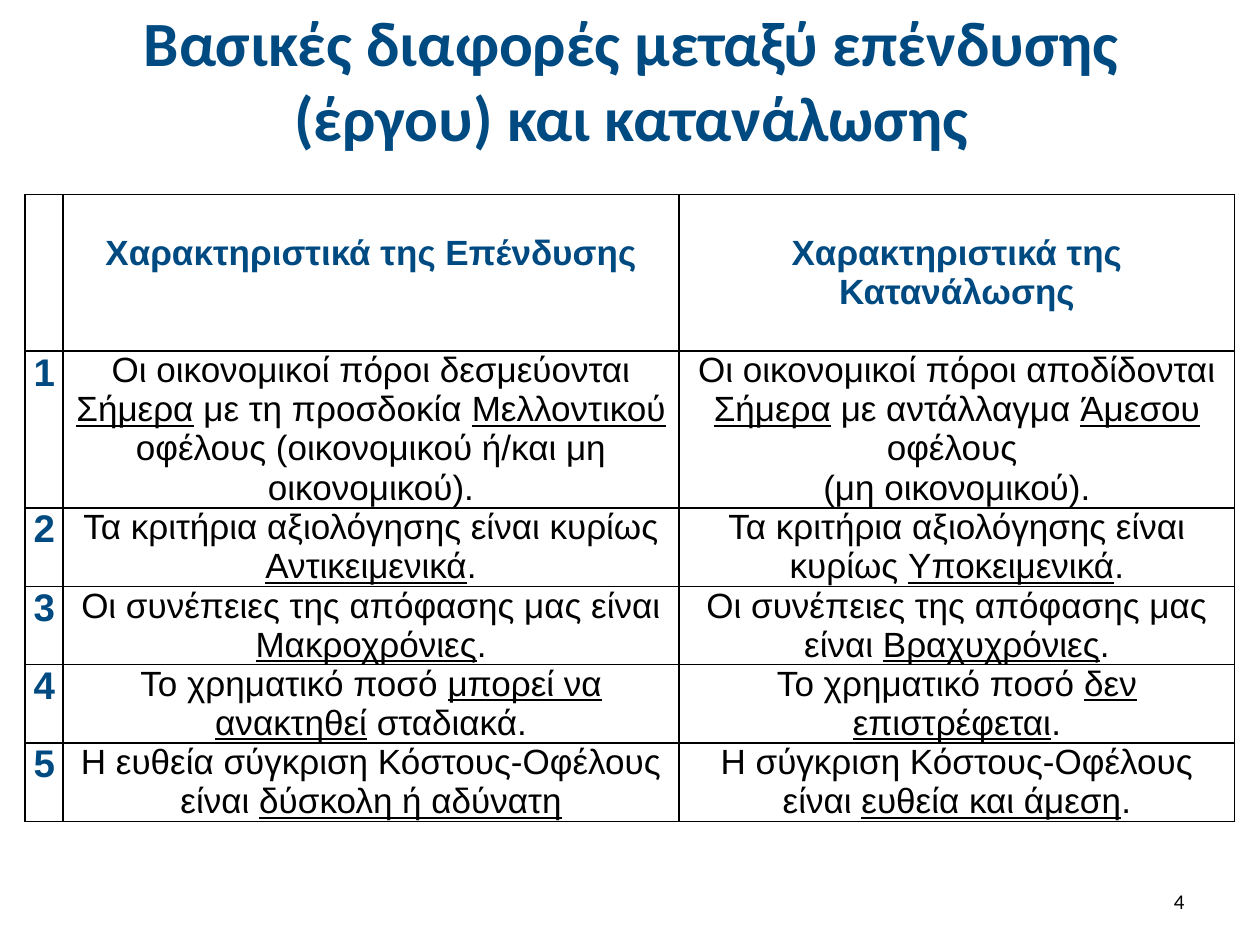
"""Build a slide comparing the features of investment and consumption."""
from dataclasses import dataclass

from lxml import etree
from pptx import Presentation
from pptx.dml.color import RGBColor
from pptx.enum.text import MSO_ANCHOR, MSO_AUTO_SIZE, PP_ALIGN
from pptx.oxml.ns import qn
from pptx.util import Cm, Pt

BLUE = RGBColor(0x00, 0x4A, 0x82)
BLACK = RGBColor(0x00, 0x00, 0x00)
CENTER, RIGHT = PP_ALIGN.CENTER, PP_ALIGN.RIGHT
MIDDLE, NO_FIT = MSO_ANCHOR.MIDDLE, MSO_AUTO_SIZE.NONE
COL_WIDTHS = (0.77, 12.42, 11.2)
LINE_HEIGHT = 0.79


@dataclass
class Difference:
    investment: str
    consumption: str
    lines: int = 2


HEADER = Difference("Χαρακτηριστικά της Επένδυσης", "Χαρακτηριστικά της Κατανάλωσης", 4)
DIFFERENCES = [
    Difference(
        "Οι οικονομικοί πόροι δεσμεύονται _Σήμερα_ με τη προσδοκία _Μελλοντικού_"
        " οφέλους (οικονομικού ή/και μη οικονομικού).",
        "Οι οικονομικοί πόροι αποδίδονται _Σήμερα_ με αντάλλαγμα _Άμεσου_"
        " οφέλους \n(μη οικονομικού).",
        4,
    ),
    Difference(
        "Τα κριτήρια αξιολόγησης είναι κυρίως _Αντικειμενικά_.",
        "Τα κριτήρια αξιολόγησης είναι κυρίως _Υποκειμενικά_.",
    ),
    Difference(
        "Οι συνέπειες της απόφασης μας είναι _Μακροχρόνιες_.",
        "Οι συνέπειες της απόφασης μας είναι _Βραχυχρόνιες_.",
    ),
    Difference(
        "Το χρηματικό ποσό _μπορεί να ανακτηθεί_ σταδιακά.",
        "Το χρηματικό ποσό _δεν επιστρέφεται_.",
    ),
    Difference(
        "Η ευθεία σύγκριση Κόστους-Οφέλους είναι _δύσκολη ή αδύνατη_",
        "Η σύγκριση Κόστους-Οφέλους είναι _ευθεία και άμεση_.",
    ),
]


def write(tf, text: str, size=20, font="Arial", color=BLACK, bold=False, align=CENTER) -> None:
    """Write text into a frame, underlining the parts between underscores."""
    p = tf.paragraphs[0]
    p.alignment = align
    for n, line in enumerate(text.split("\n")):
        if n:
            p.add_line_break()
        for i, part in enumerate(line.split("_")):
            if not part:
                continue
            r = p.add_run()
            r.text = part
            r.font.size = Pt(size)
            r.font.name = font
            r.font.bold = bold
            r.font.underline = i % 2 == 1
            r.font.color.rgb = color


def format_cell(cell, padding: float = 0) -> None:
    """Clear the fill, set the margins and draw the four borders."""
    cell.fill.background()
    cell.margin_left = cell.margin_right = Cm(0.18)
    cell.margin_top = cell.margin_bottom = Cm(padding)
    tc_pr = cell._tc.get_or_add_tcPr()
    for i, side in enumerate(("a:lnL", "a:lnR", "a:lnT", "a:lnB")):
        ln = etree.Element(qn(side), w=str(Pt(1)))
        fill = etree.SubElement(ln, qn("a:solidFill"))
        etree.SubElement(fill, qn("a:srgbClr"), val=str(BLACK))
        tc_pr.insert(i, ln)


def add_differences(slide) -> None:
    """Add the comparison table with its header and numbered rows."""
    rows = [HEADER, *DIFFERENCES]
    height = sum(row.lines for row in rows) * LINE_HEIGHT
    table = slide.shapes.add_table(
        len(rows), len(COL_WIDTHS), Cm(0.5), Cm(3.92), Cm(sum(COL_WIDTHS)), Cm(height)
    ).table
    table.first_row = table.horz_banding = False
    for col, width in zip(table.columns, COL_WIDTHS):
        col.width = Cm(width)
    for n, row in enumerate(rows):
        table.rows[n].height = Cm(row.lines * LINE_HEIGHT)
        head = n == 0
        cells = [table.cell(n, c) for c in range(len(COL_WIDTHS))]
        for cell in cells:
            format_cell(cell, LINE_HEIGHT if head else 0)
        if not head:
            write(cells[0].text_frame, str(n), size=22, color=BLUE, bold=True)
        for cell, text in zip(cells[1:], (row.investment, row.consumption)):
            write(cell.text_frame, text, color=BLUE if head else BLACK, bold=head)


def main() -> None:
    """Build and save the slide."""
    prs = Presentation()
    prs.slide_width, prs.slide_height = Cm(25.4), Cm(19.05)
    slide = prs.slides.add_slide(prs.slide_layouts[5])

    title = slide.shapes.title
    title.left, title.top, title.width, title.height = Cm(1.3), Cm(0.33), Cm(22.86), Cm(2.51)
    title.text_frame.auto_size = NO_FIT
    title.text_frame.vertical_anchor = MIDDLE
    write(title.text_frame, "Βασικές διαφορές μεταξύ επένδυσης (έργου) και κατανάλωσης",
          size=36, font="Calibri", color=BLUE, bold=True)

    add_differences(slide)

    sp = slide.shapes.add_textbox(Cm(18.2), Cm(17.66), Cm(5.93), Cm(1.01))
    sp.text_frame.word_wrap = True
    sp.text_frame.vertical_anchor = MIDDLE
    write(sp.text_frame, "4", size=12, font="Calibri", align=RIGHT)

    prs.save("out.pptx")


if __name__ == "__main__":
    main()
